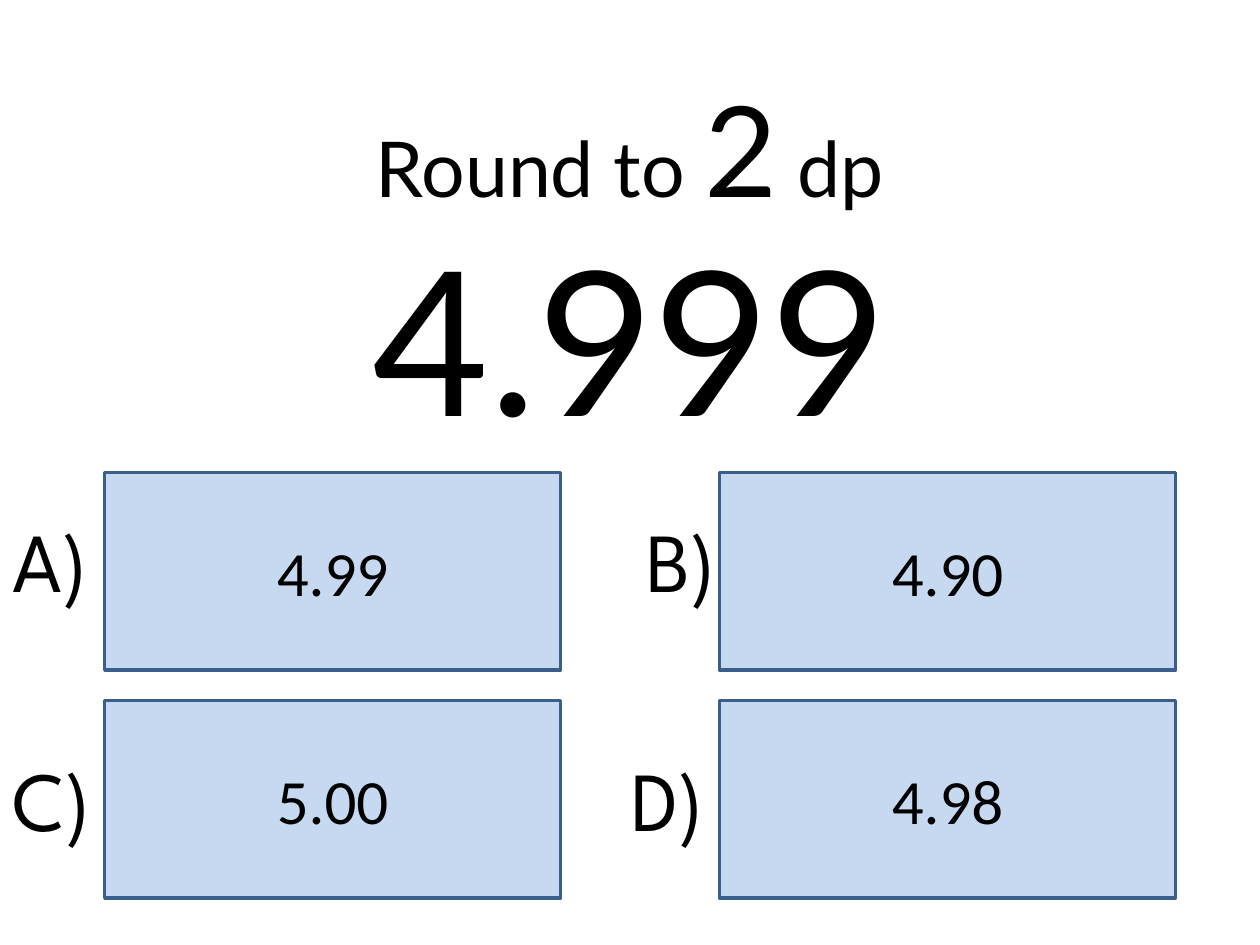
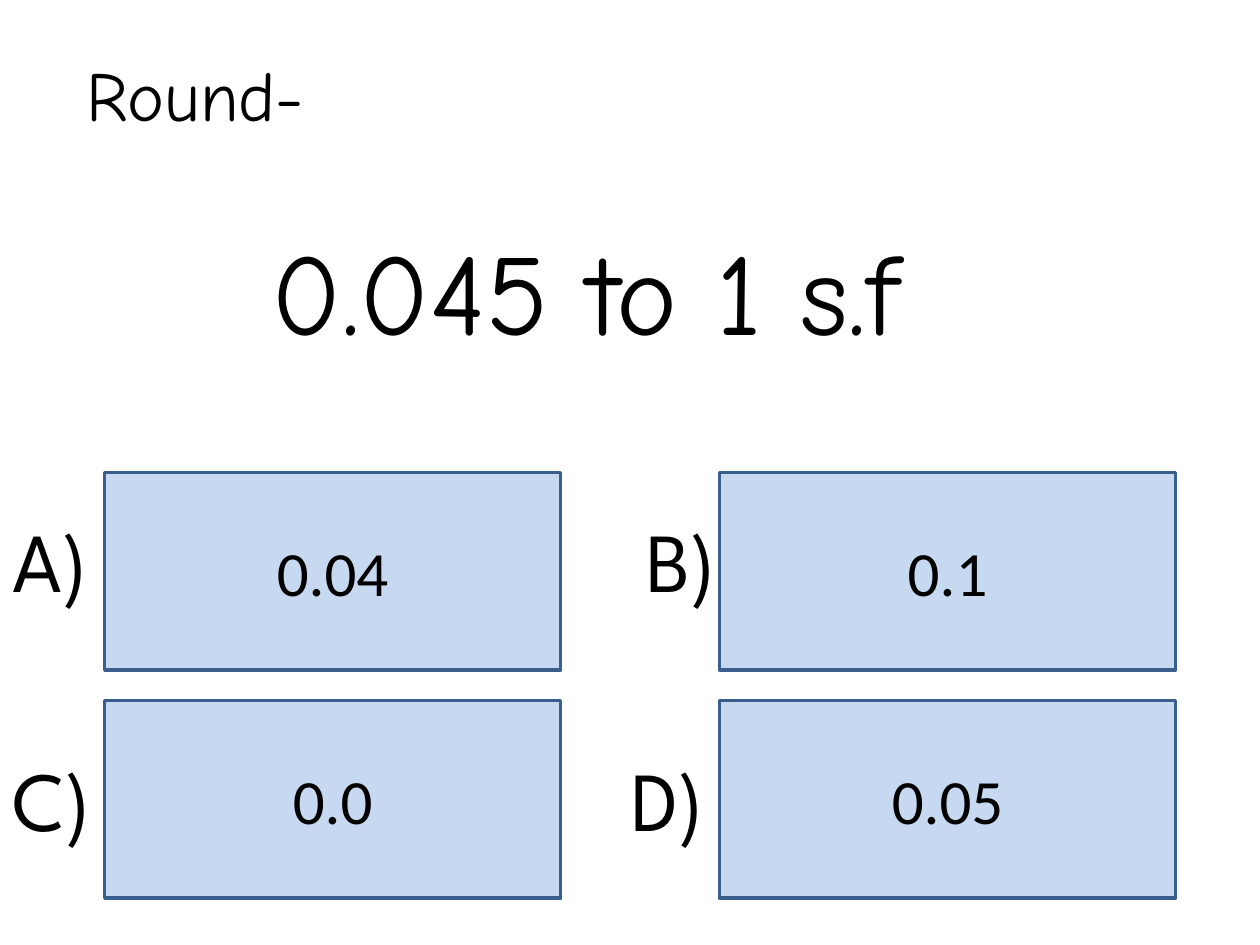
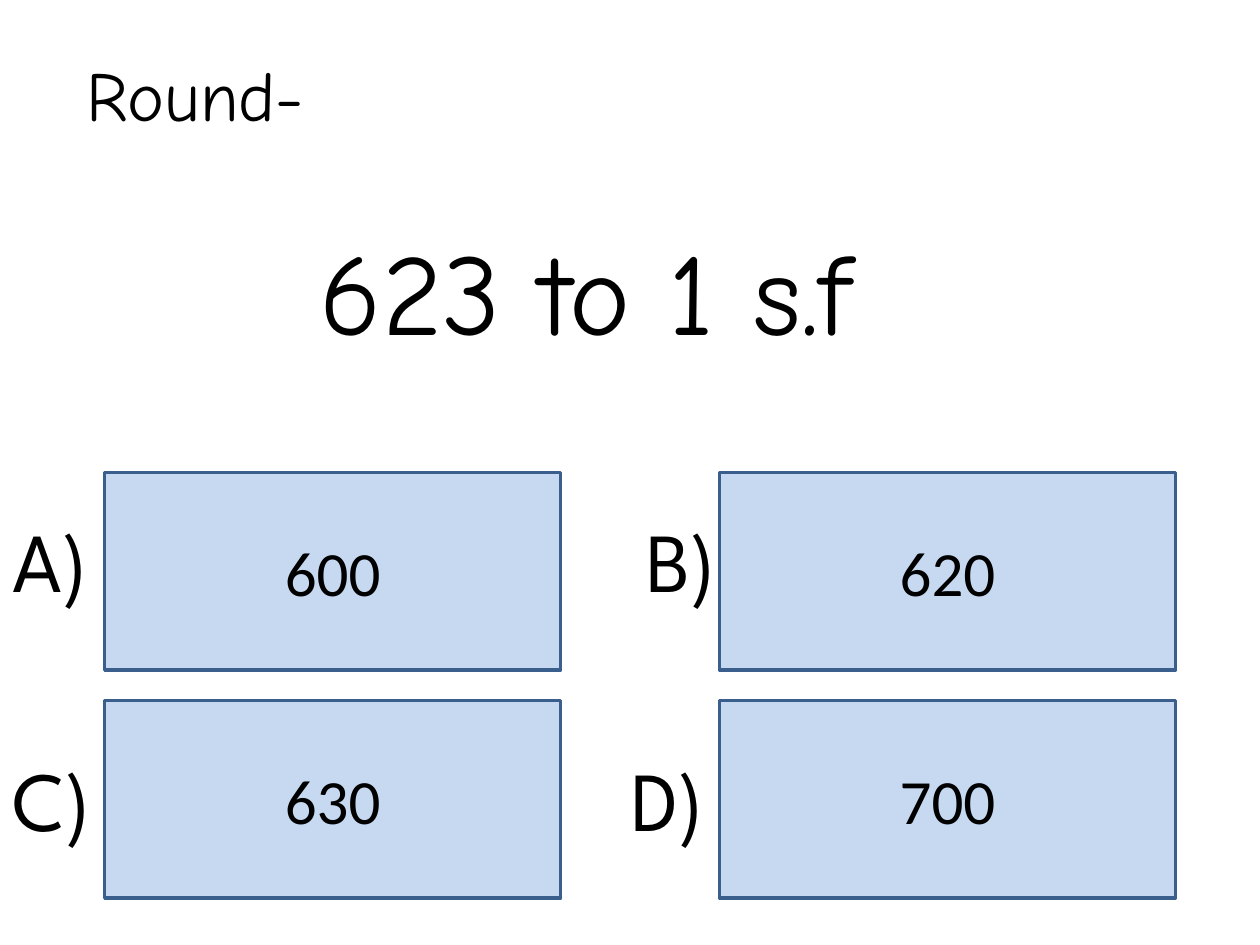
from pptx import Presentation
from pptx.dml.color import RGBColor
from pptx.enum.shapes import MSO_SHAPE as Shape
from pptx.enum.text import MSO_ANCHOR as Anchor, MSO_AUTO_SIZE as AutoSize, PP_ALIGN as Align
from pptx.util import Pt

BLACK = RGBColor(0x00, 0x00, 0x00)
PALE_BLUE = RGBColor(0xC6, 0xD9, 0xF1)
EDGE_BLUE = RGBColor(0x3A, 0x5F, 0x8C)

ANSWER_FONT = "Calibri"
LETTER_FONT = "League Spartan"
HEADING_FONT = "Lato"
QUESTION_FONT = "Comic Neue"

GRID_LEFT, GRID_TOP = 59.8, 270
COLUMN_STEP, ROW_STEP = 351.4, 130.3
ANSWER_WIDTH, ANSWER_HEIGHT = 260.6, 113
LETTERS = [("A)", 0, 68.4), ("B)", 362.2, 60.5), ("C)", 0, 72), ("D)", 353.5, 68.4)]
LETTER_TOP, LETTER_STEP, LETTER_HEIGHT = 287.3, 136.1, 65.5


class QuizDeck:
    def __init__(self):
        self.presentation = Presentation()
        self.presentation.slide_width = Pt(720)
        self.presentation.slide_height = Pt(540)
        self.slide = None

    def add_slide(self):
        layout = self.presentation.slide_layouts[6]
        self.slide = self.presentation.slides.add_slide(layout)

    def style(self, paragraph, font, size, align=Align.LEFT):
        paragraph.alignment = align
        paragraph.font.name = font
        paragraph.font.size = Pt(size)
        paragraph.font.color.rgb = BLACK

    def text_box(self, left, top, width, height):
        box = self.slide.shapes.add_textbox(Pt(left), Pt(top), Pt(width), Pt(height))
        box.text_frame.word_wrap = True
        return box.text_frame

    def answer(self, text, left, top):
        box = self.slide.shapes.add_shape(
            Shape.RECTANGLE, Pt(left), Pt(top), Pt(ANSWER_WIDTH), Pt(ANSWER_HEIGHT))
        box.shadow.inherit = False
        box.fill.solid()
        box.fill.fore_color.rgb = PALE_BLUE
        box.line.color.rgb = EDGE_BLUE
        box.line.width = Pt(2)
        box.text_frame.text = text
        box.text_frame.vertical_anchor = Anchor.MIDDLE
        self.style(box.text_frame.paragraphs[0], ANSWER_FONT, 36, Align.CENTER)

    def letter(self, text, left, top, width):
        frame = self.text_box(left, top, width, LETTER_HEIGHT)
        frame.word_wrap = False
        frame.auto_size = AutoSize.SHAPE_TO_FIT_TEXT
        frame.text = text
        self.style(frame.paragraphs[0], LETTER_FONT, 48)

    def answer_grid(self, answers):
        for index, text in enumerate(answers):
            row, column = divmod(index, 2)
            self.answer(text, GRID_LEFT + column * COLUMN_STEP, GRID_TOP + row * ROW_STEP)
        for index, (text, left, width) in enumerate(LETTERS):
            self.letter(text, left, LETTER_TOP + index // 2 * LETTER_STEP, width)

    def heading(self, top, size, runs):
        frame = self.text_box(54, top, 612, 116)
        frame.vertical_anchor = Anchor.MIDDLE
        paragraph = frame.paragraphs[0]
        self.style(paragraph, HEADING_FONT, size, Align.CENTER)
        for text, run_size in runs:
            run = paragraph.add_run()
            run.text = text
            run.font.size = Pt(run_size)

    def question(self, text):
        frame = self.text_box(42.5, 25.9, 584, 184.3)
        frame.auto_size = AutoSize.SHAPE_TO_FIT_TEXT
        prompt = frame.paragraphs[0]
        prompt.text = "Round-"
        self.style(prompt, QUESTION_FONT, 40)
        task = frame.add_paragraph()
        task.text = text
        task.space_before = Pt(48.5)
        self.style(task, QUESTION_FONT, 66, Align.CENTER)


def main():
    deck = QuizDeck()

    deck.add_slide()
    deck.answer_grid(["4.99", "4.90", "5.00", "4.98"])
    deck.heading(25.9, 44, [("Round to ", 44), ("2", 72), (" dp", 44)])
    deck.heading(133.9, 115, [("4.999", 115)])

    for question, answers in [
        ("0.045 to 1 s.f", ["0.04", "0.1", "0.0", "0.05"]),
        ("623 to 1 s.f", ["600", "620", "630", "700"]),
    ]:
        deck.add_slide()
        deck.answer_grid(answers)
        deck.question(question)

    deck.presentation.save("out.pptx")


if __name__ == "__main__":
    main()
